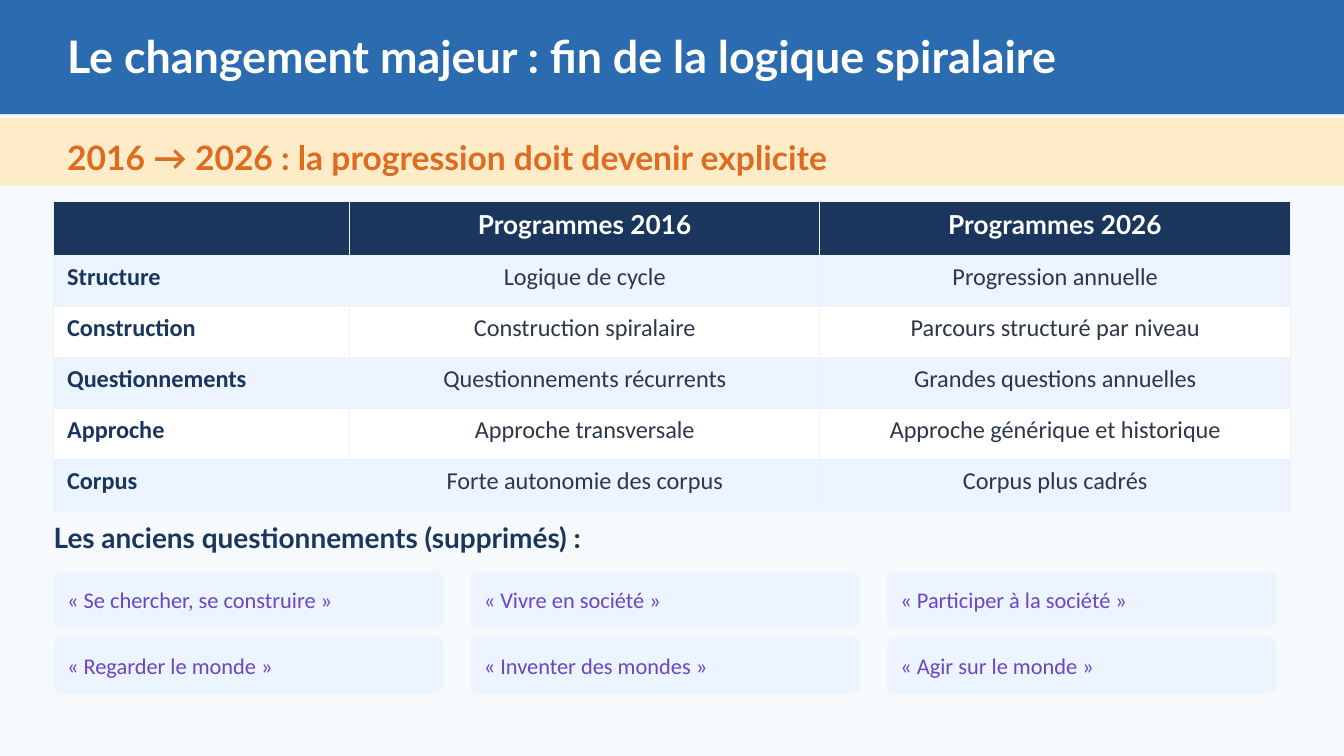
from lxml.etree import SubElement
from pptx import Presentation
from pptx.dml.color import RGBColor as RGB
from pptx.enum.shapes import MSO_SHAPE as Shape
from pptx.enum.text import MSO_ANCHOR as Anchor, PP_ALIGN as Align
from pptx.oxml.ns import qn
from pptx.util import Inches, Pt

WIDE = 10
HIGH = WIDE * 9 / 16
LEFT = 0.4
PAPER = RGB(0xF7, 0xFA, 0xFC)
BLUE = RGB(0x2B, 0x6C, 0xB0)
NAVY = RGB(0x1A, 0x36, 0x5D)
PALE = RGB(0xEB, 0xF4, 0xFF)
CREAM = RGB(0xFE, 0xEB, 0xC8)
ORANGE = RGB(0xDD, 0x6B, 0x20)
PURPLE = RGB(0x6B, 0x46, 0xC1)
SLATE = RGB(0x2D, 0x37, 0x48)
WHITE = RGB(0xFF, 0xFF, 0xFF)
RULE = RGB(0xED, 0xF2, 0xF7)

ROWS = [
    ("", "Programmes 2016", "Programmes 2026"),
    ("Structure", "Logique de cycle", "Progression annuelle"),
    ("Construction", "Construction spiralaire", "Parcours structuré par niveau"),
    ("Questionnements", "Questionnements récurrents", "Grandes questions annuelles"),
    ("Approche", "Approche transversale", "Approche générique et historique"),
    ("Corpus", "Forte autonomie des corpus", "Corpus plus cadrés"),
]
THEMES = [
    "« Se chercher, se construire »", "« Vivre en société »", "« Participer à la société »",
    "« Regarder le monde »", "« Inventer des mondes »", "« Agir sur le monde »",
]


def style(para, face, size, color, bold=False):
    for run in para.runs:
        font = run.font
        font.name, font.size, font.bold = face, Pt(size), bold
        font.color.rgb = color


def panel(slide, box, color, kind=Shape.RECTANGLE):
    shape = slide.shapes.add_shape(kind, *map(Inches, box))
    shape.shadow.inherit = False
    shape.fill.solid()
    shape.fill.fore_color.rgb = color
    shape.line.fill.background()
    return shape


def label(slide, box, text, face, size, color, bold=False):
    frame = slide.shapes.add_textbox(*map(Inches, box)).text_frame
    frame.word_wrap = True
    frame.vertical_anchor = Anchor.MIDDLE
    frame.margin_left = frame.margin_right = 0
    frame.margin_top = frame.margin_bottom = 0
    frame.text = text
    style(frame.paragraphs[0], face, size, color, bold)


def banner(slide, box, inner, text, size, fill, color):
    """Full-width band with a bold line of text in the inner box."""
    panel(slide, box, fill)
    label(slide, inner, text, "Lato", size, color, True)


def edge(cell):
    """Draw thin rules on all four sides of a cell."""
    props = cell._tc.get_or_add_tcPr()
    for side in ("a:lnL", "a:lnR", "a:lnT", "a:lnB"):
        line = SubElement(props, qn(side), w=str(Pt(0.5)))
        fill = SubElement(line, qn("a:solidFill"))
        SubElement(fill, qn("a:srgbClr"), val=str(RULE))


def compare(slide, box, widths, heights):
    """Table of the two programmes, side by side."""
    table = slide.shapes.add_table(len(ROWS), len(widths), *map(Inches, box)).table
    for col, width in zip(table.columns, widths):
        col.width = Inches(width)
    for row, height in zip(table.rows, heights):
        row.height = Inches(height)
    for r, texts in enumerate(ROWS):
        for c, text in enumerate(texts):
            cell = table.cell(r, c)
            edge(cell)
            cell.fill.solid()
            cell.fill.fore_color.rgb = NAVY if r == 0 else PALE if r % 2 else WHITE
            cell.text = text
            para = cell.text_frame.paragraphs[0]
            if c:
                para.alignment = Align.CENTER
            if r == 0:
                style(para, "Lato", 14, WHITE, True)
            else:
                style(para, "Calibri", 13, SLATE if c else NAVY, c == 0)


def chips(slide, box, cols=3, gap=0.2, gutter=0.07, pad=0.1):
    """Grid of rounded tags, one for each theme."""
    left, top, width, height = box
    rows = len(THEMES) // cols
    wide = (width - gap * (cols - 1)) / cols
    high = (height - gutter * (rows - 1)) / rows
    for i, text in enumerate(THEMES):
        row, col = divmod(i, cols)
        x, y = left + col * (wide + gap), top + row * (high + gutter)
        chip = panel(slide, (x, y, wide, high), PALE, Shape.ROUNDED_RECTANGLE)
        chip.adjustments[0] = 0.14
        label(slide, (x + pad, y, wide - 2 * pad, high), text, "Calibri", 12, PURPLE)


def main():
    deck = Presentation()
    deck.slide_width, deck.slide_height = Inches(WIDE), Inches(HIGH)
    slide = deck.slides.add_slide(deck.slide_layouts[6])
    slide.background.fill.solid()
    slide.background.fill.fore_color.rgb = PAPER

    banner(slide, (0, 0, WIDE, 0.85), (0.5, 0.1, 9, 0.62),
           "Le changement majeur : fin de la logique spiralaire", 24, BLUE, WHITE)
    banner(slide, (0, 0.88, WIDE, 0.5), (0.5, 0.94, 9, 0.45),
           "2016 → 2026 : la progression doit devenir explicite", 18, CREAM, ORANGE)
    compare(slide, (LEFT, 1.5, 9.2, 2.3), (2.2, 3.5, 3.5), [0.4] + [0.38] * 5)
    label(slide, (LEFT, 3.85, 9, 0.3), "Les anciens questionnements (supprimés) :",
          "Lato", 15, NAVY, True)
    chips(slide, (LEFT, 4.25, 9.1, 0.91))
    deck.save("out.pptx")


if __name__ == "__main__":
    main()
